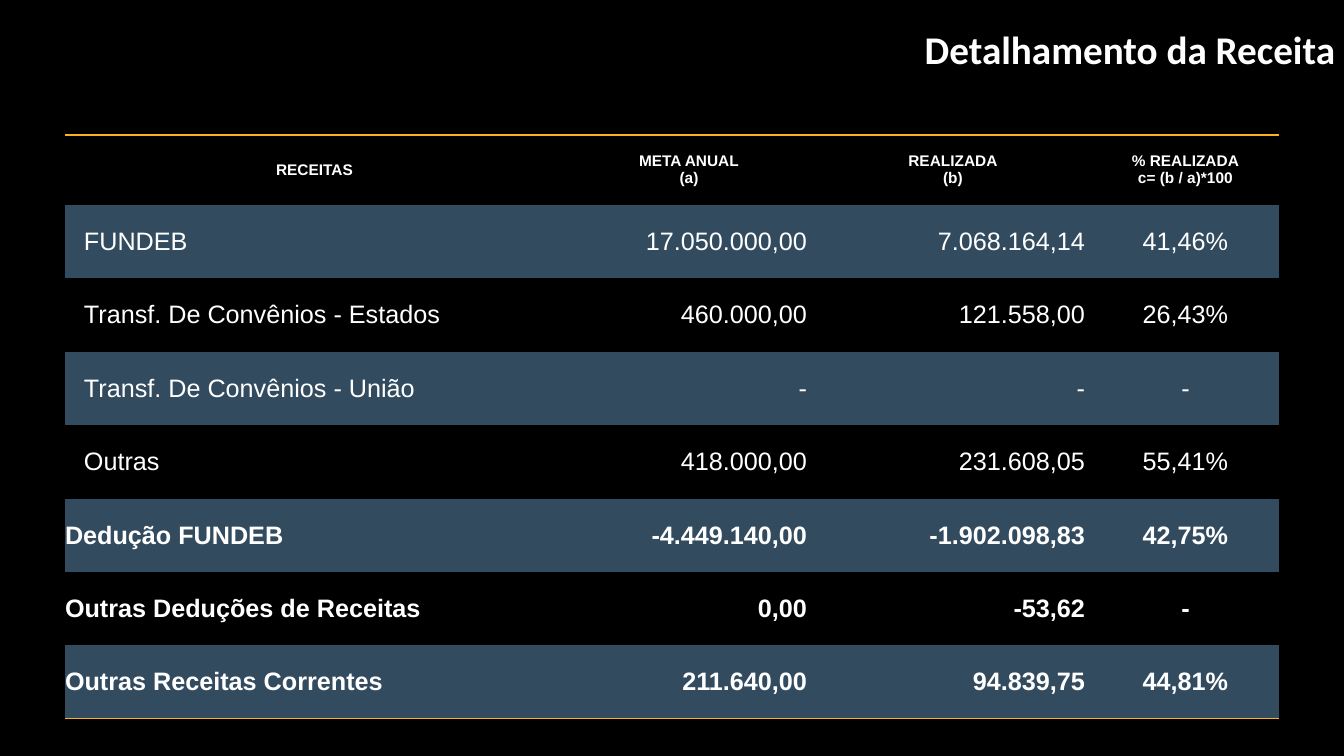
from dataclasses import dataclass

from lxml.etree import SubElement
from pptx import Presentation
from pptx.dml.color import RGBColor
from pptx.enum.text import MSO_ANCHOR, PP_ALIGN as Align
from pptx.oxml.ns import qn
from pptx.util import Pt

SLIDE_W, SLIDE_H = 1344, 756
SCALE = 12192000 / SLIDE_W
NO_STYLE = "{2D5ABB26-0587-4C30-8999-92F81FD0307C}"


@dataclass(frozen=True)
class Theme:
    back: str = "000000"
    text: str = "FFFFFF"
    band: str = "324B5F"
    rule: str = "FCB11C"
    title_font: str = "Calibri"
    table_font: str = "Arial"
    title_size: int = 28
    head_size: int = 11
    body_size: int = 18


@dataclass(frozen=True)
class Column:
    head: str
    width: int
    align: Align
    right: int = 0


@dataclass(frozen=True)
class Revenue:
    values: tuple[str, str, str, str]
    total: bool = False


THEME = Theme()
COLUMNS = (
    Column("RECEITAS", 499, Align.LEFT),
    Column("META ANUAL\n(a)", 250, Align.RIGHT, 7),
    Column("REALIZADA\n(b)", 278, Align.RIGHT, 7),
    Column("% REALIZADA\nc= (b / a)*100", 187, Align.CENTER),
)
REVENUES = (
    Revenue(("FUNDEB", "17.050.000,00", "7.068.164,14", "41,46%")),
    Revenue(("Transf. De Convênios - Estados", "460.000,00", "121.558,00", "26,43%")),
    Revenue(("Transf. De Convênios - União", "-", "-", "-")),
    Revenue(("Outras", "418.000,00", "231.608,05", "55,41%")),
    Revenue(("Dedução FUNDEB", "-4.449.140,00", "-1.902.098,83", "42,75%"), True),
    Revenue(("Outras Deduções de Receitas", "0,00", "-53,62", "-"), True),
    Revenue(("Outras Receitas Correntes", "211.640,00", "94.839,75", "44,81%"), True),
)
LEFT, TOP, HEAD_H, BODY_H, INDENT = 65, 135, 70, 514, 19


def px(n: int) -> int:
    return round(n * SCALE)


def write(tf, text: str, align: Align, font: str, size: int, bold: bool) -> None:
    tf.text = text
    for p in tf.paragraphs:
        p.alignment = align
        for r in p.runs:
            for name, value in dict(name=font, size=Pt(size), bold=bold).items():
                setattr(r.font, name, value)
            r.font.color.rgb = RGBColor.from_string(THEME.text)


def rule(cell, side: str) -> None:
    """Draw one cell border; called before the cell's fill is set."""
    ln = SubElement(cell._tc.get_or_add_tcPr(), qn(f"a:{side}"), w=str(Pt(1)))
    SubElement(SubElement(ln, qn("a:solidFill")), qn("a:srgbClr"), val=THEME.rule)


def fill_cell(cell, text: str, align: Align, size: int, bold: bool,
              left: int = 0, right: int = 0, band: bool = False) -> None:
    box = dict(margin_left=px(left), margin_right=px(right), margin_top=0,
               margin_bottom=0, vertical_anchor=MSO_ANCHOR.MIDDLE)
    for name, value in box.items():
        setattr(cell, name, value)
    if band:
        cell.fill.solid()
        cell.fill.fore_color.rgb = RGBColor.from_string(THEME.band)
    else:
        cell.fill.background()
    write(cell.text_frame, text, align, THEME.table_font, size, bold)


def add_title(s) -> None:
    tf = s.shapes.add_textbox(px(495), px(20), px(850), px(57)).text_frame
    tf.word_wrap = True
    write(tf, "Detalhamento da Receita", Align.RIGHT, THEME.title_font,
          THEME.title_size, True)


def add_revenue_table(s) -> None:
    width = sum(c.width for c in COLUMNS)
    tbl = s.shapes.add_table(len(REVENUES) + 1, len(COLUMNS), px(LEFT), px(TOP),
                             px(width), px(HEAD_H + BODY_H)).table
    tbl.first_row = tbl.horz_banding = False
    tbl._tbl.tblPr.find(qn("a:tableStyleId")).text = NO_STYLE
    for i, row in enumerate(tbl.rows):
        row.height = px(BODY_H) // len(REVENUES) if i else px(HEAD_H)

    for j, col in enumerate(COLUMNS):
        tbl.columns[j].width = px(col.width)
        # Heading and the table's outer rules
        rule(tbl.cell(0, j), "lnT")
        rule(tbl.cell(len(REVENUES), j), "lnB")
        fill_cell(tbl.cell(0, j), col.head, Align.CENTER, THEME.head_size, True)
        # Revenue lines, every other one banded
        for i, rev in enumerate(REVENUES, 1):
            left = INDENT if j == 0 and not rev.total else 0
            fill_cell(tbl.cell(i, j), rev.values[j], col.align, THEME.body_size,
                      rev.total, left, col.right, band=i % 2 == 1)


def main() -> None:
    prs = Presentation()
    prs.slide_width, prs.slide_height = px(SLIDE_W), px(SLIDE_H)
    s = prs.slides.add_slide(prs.slide_layouts[6])
    s.background.fill.solid()
    s.background.fill.fore_color.rgb = RGBColor.from_string(THEME.back)
    add_title(s)
    add_revenue_table(s)
    prs.save("out.pptx")


if __name__ == "__main__":
    main()
